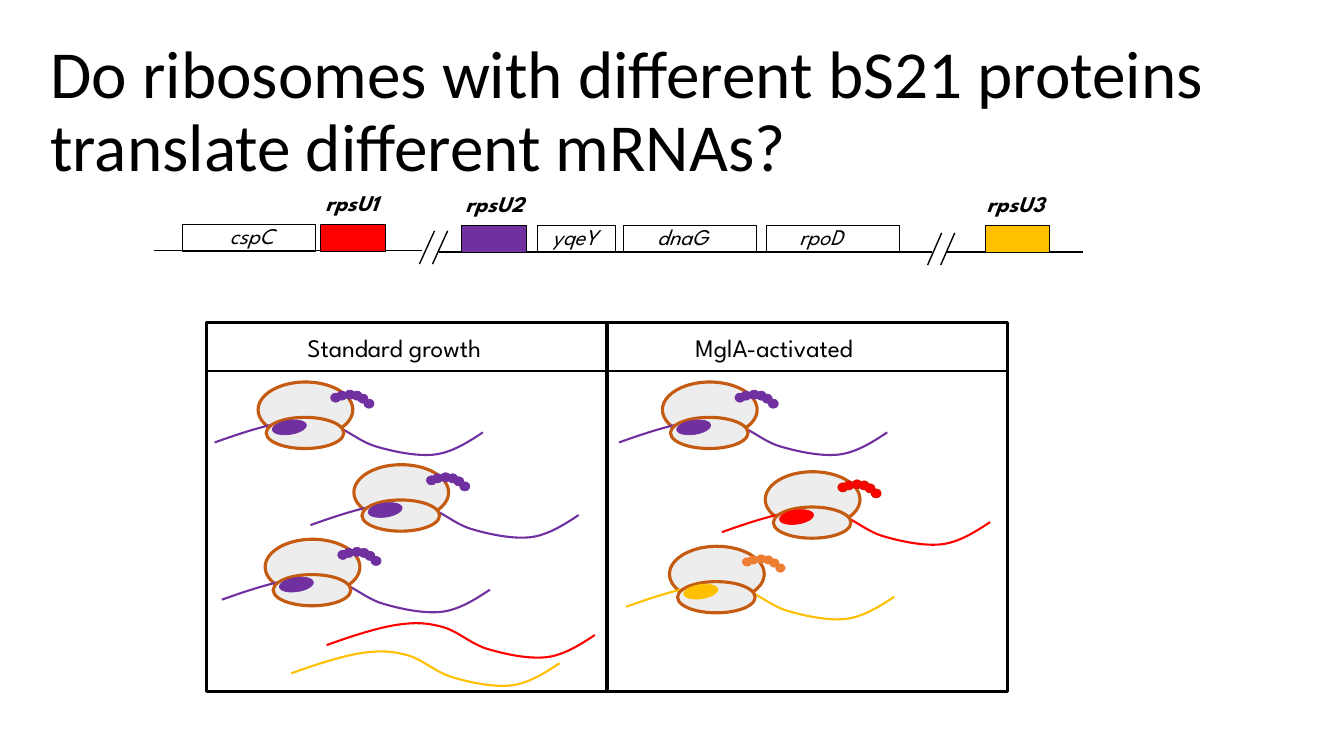
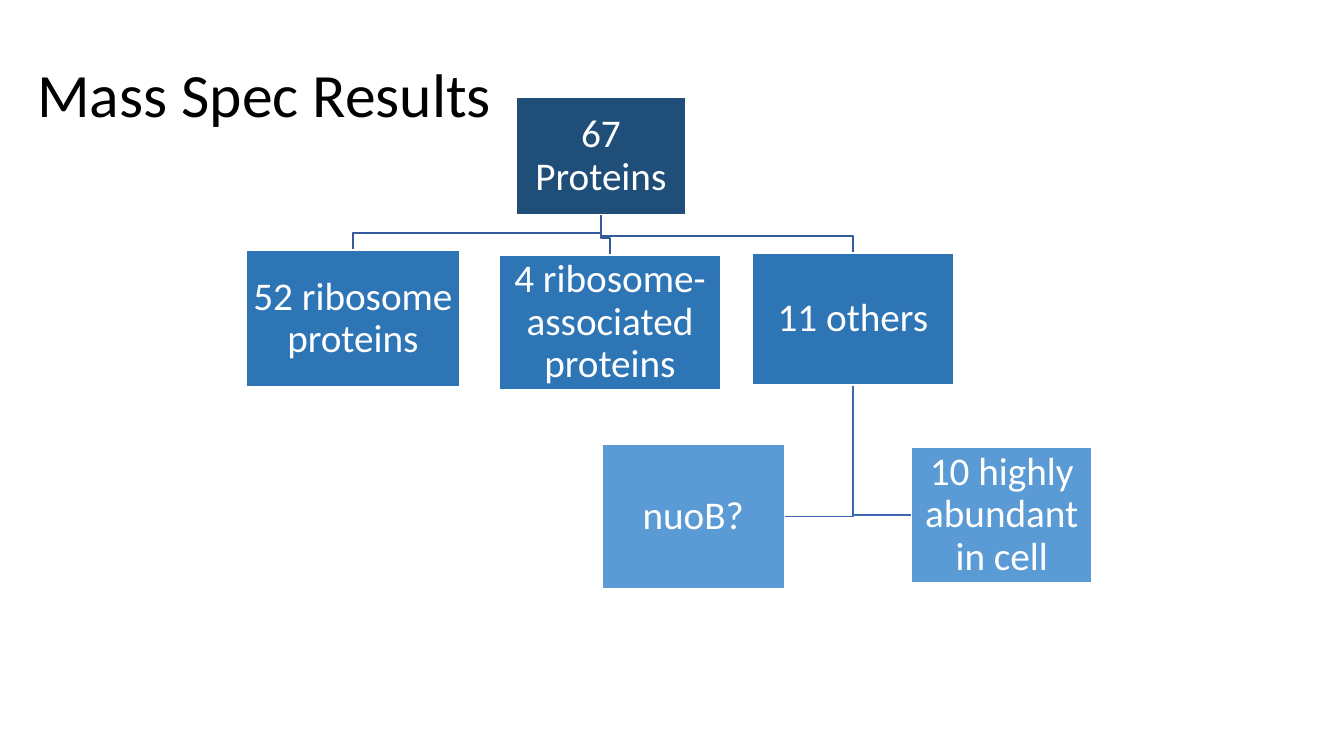
import dataclasses

import lxml.etree
import pptx
import pptx.dml.color
import pptx.enum.shapes
import pptx.enum.text
import pptx.oxml.ns
import pptx.util

Inches = pptx.util.Inches
SHAPES = pptx.enum.shapes.MSO_SHAPE


@dataclasses.dataclass(frozen=True)
class Theme:
    body_font: str = "Calibri"
    label_font: str = "League Spartan"
    black: str = "000000"
    white: str = "FFFFFF"
    red: str = "FF0000"
    dark_red: str = "CD1C00"
    purple: str = "7030A0"
    gold: str = "FFC000"
    orange: str = "ED7D31"
    ribosome_fill: str = "EDEDED"
    ribosome_line: str = "C55A11"
    tree_fills: tuple = ("1F4E79", "2E75B6", "5B9BD5")
    tree_lines: tuple = ("365B9D", "3E67B2")
    long_title_size: int = 48
    title_size: int = 44
    tree_size: int = 28
    panel_size: int = 18
    gene_size: int = 16


THEME = Theme()


@dataclasses.dataclass(frozen=True)
class Box:
    left: float
    top: float
    width: float
    height: float

    @property
    def center(self):
        return self.left + self.width / 2

    @property
    def middle(self):
        return self.top + self.height / 2

    @property
    def right(self):
        return self.left + self.width

    @property
    def bottom(self):
        return self.top + self.height

    def inches(self):
        return [Inches(value) for value in dataclasses.astuple(self)]


def rgb(color):
    return pptx.dml.color.RGBColor.from_string(color)


def style_line(line, color, width):
    line.color.rgb = rgb(color)
    line.width = pptx.util.Pt(width)


def style_text(shape, size, color=THEME.black, font=THEME.body_font, bold=False, italic=False):
    for paragraph in shape.text_frame.paragraphs:
        for run in paragraph.runs:
            run.font.name = font
            run.font.size = pptx.util.Pt(size)
            run.font.color.rgb = rgb(color)
            run.font.bold = bold
            run.font.italic = italic


def add_figure(slide, kind, box, fill=None, line=None, width=0.5):
    shape = slide.shapes.add_shape(kind, *box.inches())
    shape.shadow.inherit = False
    if fill:
        shape.fill.solid()
        shape.fill.fore_color.rgb = rgb(fill)
    else:
        shape.fill.background()
    if line:
        style_line(shape.line, line, width)
    else:
        shape.line.fill.background()
    return shape


def add_line(slide, start, end, width):
    connector = slide.shapes.add_connector(
        pptx.enum.shapes.MSO_CONNECTOR.STRAIGHT, *[Inches(value) for value in start + end])
    style_line(connector.line, THEME.black, width)
    lxml.etree.SubElement(connector._element.spPr, pptx.oxml.ns.qn("a:effectLst"))


def add_outline(slide, points, color, width):
    """Draw an open, unfilled polyline."""
    start, *others = [(Inches(x), Inches(y)) for x, y in points]
    builder = slide.shapes.build_freeform(*start)
    builder.add_line_segments(others, close=False)
    shape = builder.convert_to_shape()
    shape.shadow.inherit = False
    shape.fill.background()
    style_line(shape.line, color, width)
    return shape


def add_curve(slide, points, color, width):
    """Draw cubic curves; after the start, every three points make one curve."""
    shape = add_outline(slide, points, color, width)
    segments = list(shape._element.iter(pptx.oxml.ns.qn("a:lnTo")))
    for index in range(0, len(segments), 3):
        first, *others = segments[index:index + 3]
        curve = lxml.etree.Element(pptx.oxml.ns.qn("a:cubicBezTo"))
        first.addprevious(curve)
        for segment in (first, *others):
            curve.append(segment[0])
            segment.getparent().remove(segment)


def add_label(slide, box, text, size, bold=False, italic=False):
    shape = slide.shapes.add_textbox(*box.inches())
    shape.text_frame.text = text
    shape.text_frame.word_wrap = False
    shape.text_frame.auto_size = pptx.enum.text.MSO_AUTO_SIZE.SHAPE_TO_FIT_TEXT
    style_text(shape, size, font=THEME.label_font, bold=bold, italic=italic)


def add_titled_slide(presentation, text, box, size):
    slide = presentation.slides.add_slide(presentation.slide_layouts[5])
    title = slide.shapes.title
    title.left, title.top, title.width, title.height = box.inches()
    frame = title.text_frame
    frame.text = text
    frame.word_wrap = True
    frame.auto_size = pptx.enum.text.MSO_AUTO_SIZE.NONE
    frame.vertical_anchor = pptx.enum.text.MSO_ANCHOR.MIDDLE
    frame.paragraphs[0].alignment = pptx.enum.text.PP_ALIGN.LEFT
    frame.paragraphs[0].line_spacing = 0.9
    style_text(title, size)
    return slide


# Name, offset, width, fill, label offset from the gene, label width
LOCI = [
    (Box(1.53, 1.83, 2.66, 0.66), [
        ("cspC", 0.28, 1.32, None, 0.37, 0.77),
        ("rpsU1", 1.65, 0.64, THEME.red, -0.05, 0.79)]),
    (Box(4.35, 1.84, 4.89, 0.66), [
        ("rpsU2", 0.23, 0.64, THEME.purple, -0.06, 0.79),
        ("yqeY", 0.98, 0.77, None, 0.05, 0.75),
        ("dnaG", 1.83, 1.32, None, 0.24, 0.84),
        ("rpoD", 3.25, 1.32, None, 0.23, 0.74)]),
    (Box(9.39, 1.84, 1.35, 0.66), [
        ("rpsU3", 0.38, 0.64, THEME.gold, -0.08, 0.79)]),
]
BREAKS = [Box(4.16, 2.29, 0.15, 0.33), Box(9.2, 2.31, 0.14, 0.32)]


def add_locus(slide, box, genes):
    """Stand genes on the bottom edge of the box; coloured ones are named above."""
    add_line(slide, (box.left, box.bottom), (box.right, box.bottom), 0.75)
    for name, offset, width, fill, label_offset, label_width in genes:
        left = box.left + offset
        add_figure(slide, SHAPES.RECTANGLE, Box(left, box.bottom - 0.26, width, 0.26),
                   fill, THEME.black)
        label_top = box.top if fill else box.top + 0.32
        add_label(slide, Box(left + label_offset, label_top, label_width, 0.37),
                  name, THEME.gene_size, bold=bool(fill), italic=True)


def add_break(slide, box):
    for shift in (0, 0.13):
        add_line(slide, (box.right + shift, box.top), (box.left + shift, box.bottom), 1)


MRNA_POINTS = [
    (0, 0), (0.25, -0.09), (0.5, -0.17), (0.69, -0.2),
    (0.89, -0.23), (1, -0.22), (1.15, -0.18),
    (1.3, -0.14), (1.43, -0.01), (1.6, 0.04),
    (1.77, 0.09), (2, 0.14), (2.18, 0.12),
    (2.35, 0.1), (2.51, 0), (2.66, -0.1),
]
BEADS = [(0.72, 0.11), (0.78, 0.09), (0.86, 0.08), (0.93, 0.09), (0.99, 0.12), (1.05, 0.17)]


def add_mrna(slide, left, top, color):
    add_curve(slide, [(left + x, top + y) for x, y in MRNA_POINTS], color, 1.5)


def add_ribosome(slide, left, top, color, bead_fill, bead_line):
    """Place a translating ribosome from the corner of its large subunit."""
    def oval(x, y, width, height, *style):
        return add_figure(slide, SHAPES.OVAL, Box(left + x, top + y, width, height), *style)

    subunit_style = (THEME.ribosome_fill, THEME.ribosome_line, 2.25)
    oval(0, 0, 0.94, 0.55, *subunit_style)
    for x, y in BEADS:
        oval(x, y, 0.1, 0.09, bead_fill, bead_line)
    add_mrna(slide, left - 0.43, top + 0.6, color)
    oval(0.08, 0.35, 0.77, 0.31, *subunit_style)
    oval(0.14, 0.38, 0.34, 0.14, color, color).rotation = -8.4


PURPLE_STYLE = (THEME.purple, THEME.purple, THEME.purple)
RED_STYLE = (THEME.red, THEME.red, THEME.dark_red)
GOLD_STYLE = (THEME.gold, THEME.orange, None)


def add_growth_panel(slide, box, heading, heading_offset, heading_width, ribosomes, free_mrnas=()):
    for x, y, style in ribosomes:
        add_ribosome(slide, box.left + x, box.top + y, *style)
    for x, y, color in free_mrnas:
        add_mrna(slide, box.left + x, box.top + y, color)
    add_label(slide, Box(box.left + heading_offset, box.top + 0.05, heading_width, 0.4),
              heading, THEME.panel_size)
    add_figure(slide, SHAPES.RECTANGLE, box, None, THEME.black, 2.25)
    rule = box.top + 0.48
    add_line(slide, (box.left, rule), (box.right, rule), 1)


def build_question_slide(presentation):
    slide = add_titled_slide(
        presentation, "Do ribosomes with different bS21 proteins translate different mRNAs?",
        Box(0.4, 0.22, 11.78, 1.81), THEME.long_title_size)
    for box, genes in LOCI:
        add_locus(slide, box, genes)
    for box in BREAKS:
        add_break(slide, box)
    standard = Box(2.05, 3.2, 3.97, 3.66)
    activated = dataclasses.replace(standard, left=standard.right)
    add_growth_panel(
        slide, standard, "Standard growth", 0.9, 2.27,
        [(0.58, 2.15, PURPLE_STYLE), (1.46, 1.41, PURPLE_STYLE), (0.51, 0.59, PURPLE_STYLE)],
        [(1.19, 3.2, THEME.red), (0.84, 3.48, THEME.gold)])
    add_growth_panel(
        slide, activated, "MglA-activated", 0.78, 2.13,
        [(1.57, 1.48, RED_STYLE), (0.62, 2.22, GOLD_STYLE), (0.55, 0.59, PURPLE_STYLE)])


def add_tree_box(slide, box, text, level):
    shape = add_figure(slide, SHAPES.RECTANGLE, box, THEME.tree_fills[level], THEME.white, 1)
    frame = shape.text_frame
    frame.text = text
    frame.word_wrap = True
    frame.vertical_anchor = pptx.enum.text.MSO_ANCHOR.MIDDLE
    frame.margin_left = frame.margin_right = Inches(0.02)
    frame.margin_top = frame.margin_bottom = Inches(0.02)
    frame.paragraphs[0].alignment = pptx.enum.text.PP_ALIGN.CENTER
    frame.paragraphs[0].line_spacing = 0.9
    style_text(shape, THEME.tree_size, THEME.white)


def build_results_slide(presentation):
    slide = add_titled_slide(presentation, "Mass Spec Results",
                             Box(0.27, 0.24, 11.5, 1.45), THEME.title_size)
    root = Box(5.12, 0.97, 1.68, 1.16)
    others = Box(7.46, 2.51, 2, 1.31)
    groups = [(Box(2.44, 2.48, 2.12, 1.36), "52 ribosome proteins"),
              (Box(4.95, 2.53, 2.2, 1.34), "4 ribosome-associated proteins"),
              (others, "11 others")]
    details = [(Box(9.04, 4.44, 1.79, 1.34), "10 highly abundant in cell"),
               (Box(5.97, 4.41, 1.81, 1.43), "nuoB?")]
    for box, _ in details:
        side = box.left if box.left > others.center else box.right
        add_outline(slide, [(others.center, others.bottom), (others.center, box.middle),
                            (side, box.middle)], THEME.tree_lines[1], 1)
    for box, _ in groups:
        bend = box.top - 0.17
        add_outline(slide, [(root.center, root.bottom), (root.center, bend),
                            (box.center, bend), (box.center, box.top)], THEME.tree_lines[0], 1)
    for level, boxes in enumerate([[(root, "67 Proteins")], groups, details]):
        for box, text in boxes:
            add_tree_box(slide, box, text, level)


def main():
    presentation = pptx.Presentation()
    presentation.slide_width = Inches(13.33)
    presentation.slide_height = Inches(7.5)
    build_question_slide(presentation)
    build_results_slide(presentation)
    presentation.save("out.pptx")


if __name__ == "__main__":
    main()
